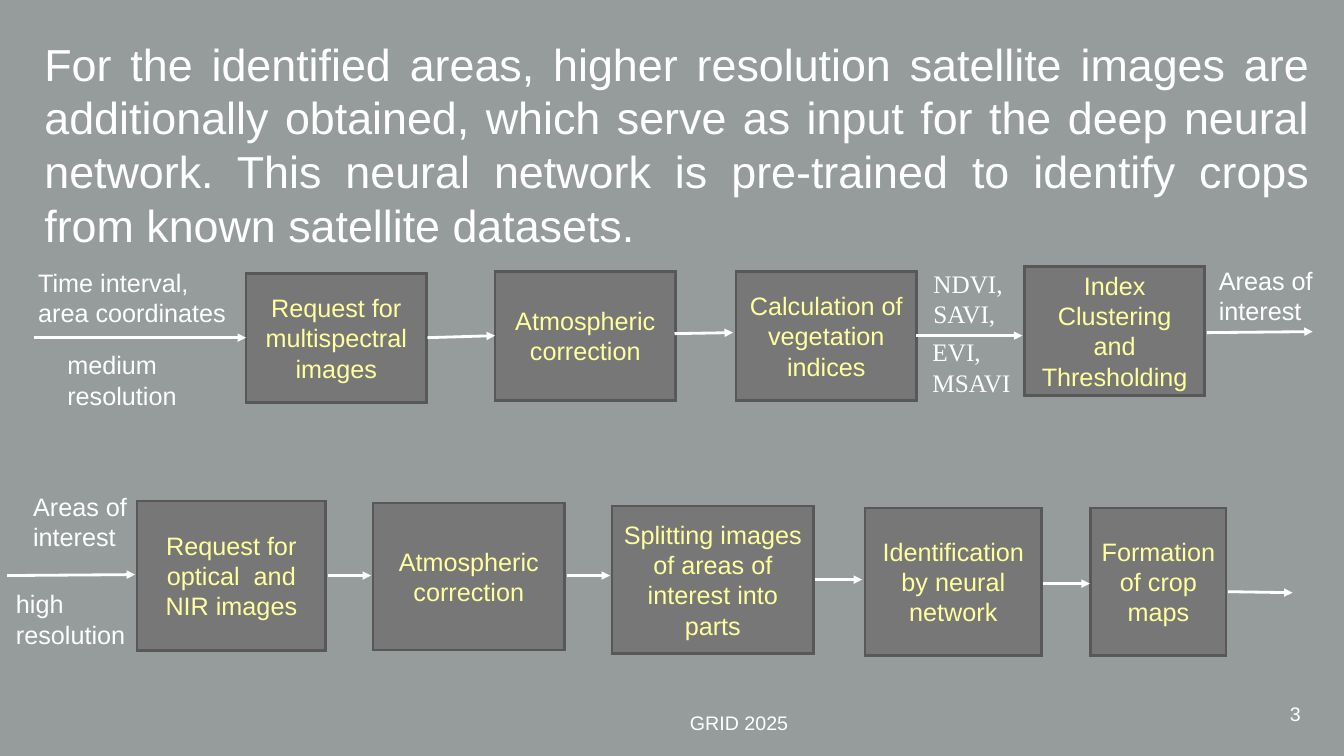
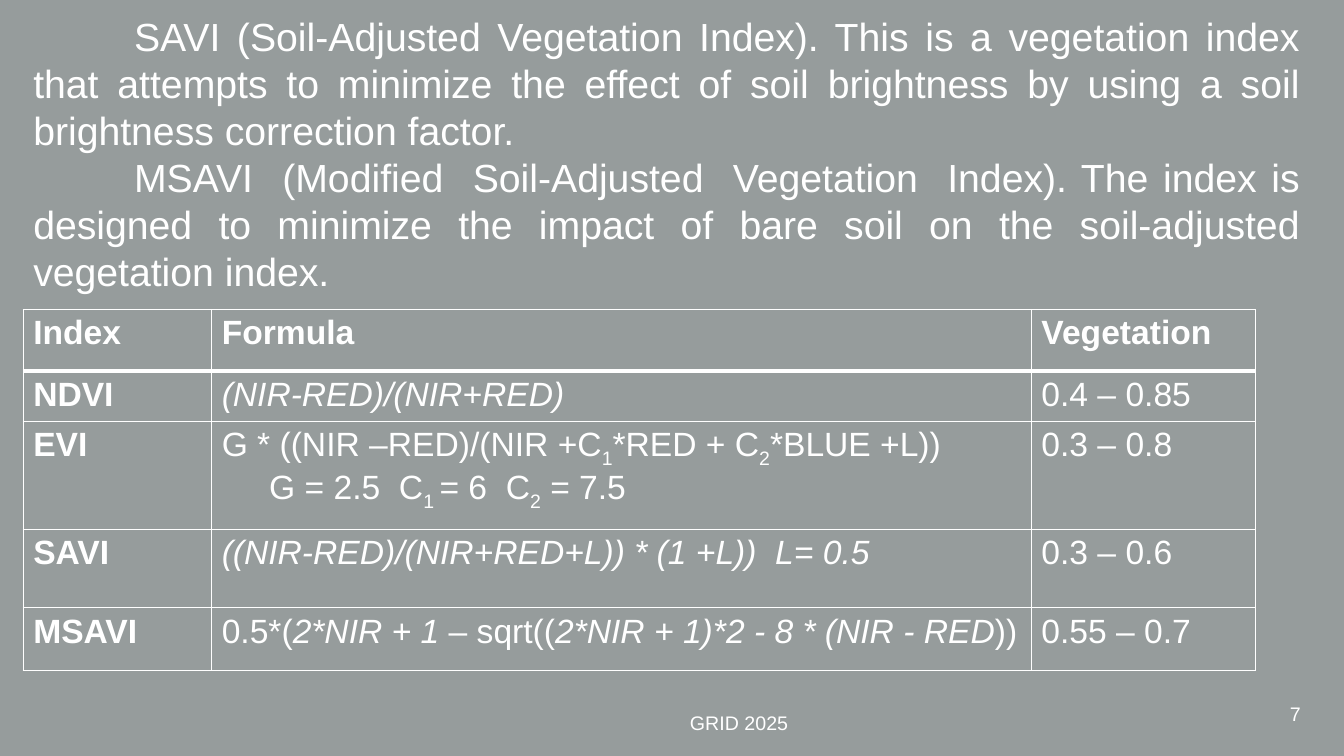
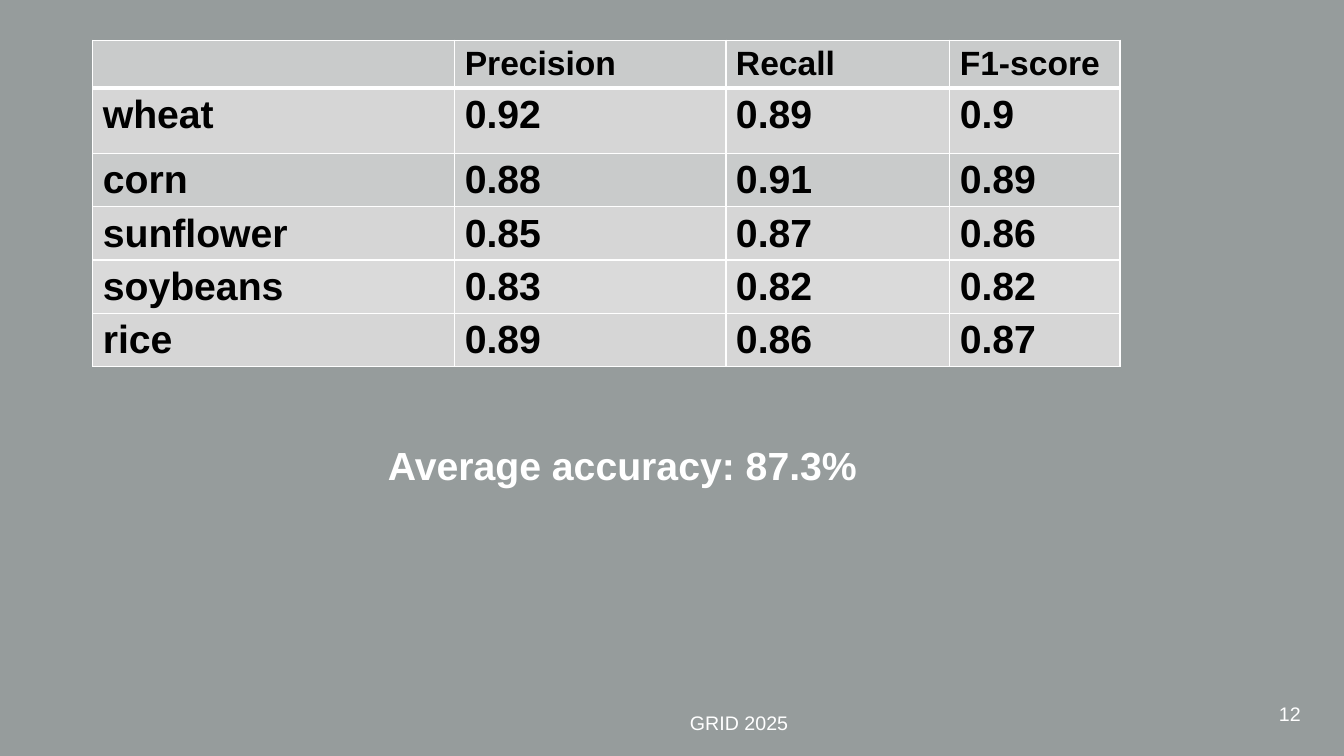
from dataclasses import dataclass
from itertools import product
from math import cos, pi, sin

from lxml.etree import SubElement
from pptx import Presentation
from pptx.dml.color import RGBColor
from pptx.enum.shapes import MSO_CONNECTOR, MSO_SHAPE
from pptx.enum.text import MSO_ANCHOR, MSO_AUTO_SIZE, PP_ALIGN
from pptx.oxml.ns import qn
from pptx.util import Inches, Pt

COLORS = {
    "background": "969C9C",
    "curve_end": "979E9F",
    "text": "FFFFFF",
    "box": "777777",
    "box_edge": "585858",
    "box_text": "FFFF9E",
    "score_text": "000000",
    "band_dark": "C9CBCB",
    "band_mid": "D6D6D6",
    "band_light": "DADADA",
}
FONT = "Arial"
SERIF = "Times New Roman"
FOOTER = "GRID 2025"


@dataclass
class Step:
    left: float
    top: float
    width: float
    height: float
    text: str


@dataclass
class Arrow:
    x1: float
    y1: float
    x2: float
    y2: float


@dataclass
class Label:
    left: float
    top: float
    width: float
    lines: tuple[str, ...]
    font: str = FONT


@dataclass
class Run:
    text: str
    italic: bool = False
    subscript: bool = False


@dataclass
class Grid:
    left: float
    top: float
    columns: tuple[float, ...]
    rows: tuple[float, ...]


# Processing chains
STEPS = (
    Step(2.44, 2.71, 1.79, 1.28, "Request for multispectral images"),
    Step(4.91, 2.69, 1.79, 1.28, "Atmospheric correction"),
    Step(7.3, 2.69, 1.79, 1.28, "Calculation of vegetation indices"),
    Step(10.16, 2.64, 1.79, 1.28, "Index Clustering and Thresholding"),
    Step(1.36, 4.97, 1.87, 1.48, "Request for optical  and NIR images"),
    Step(3.7, 4.99, 1.9, 1.46, "Atmospheric correction"),
    Step(6.07, 5.02, 2, 1.46, "Splitting images of areas of interest into parts"),
    Step(8.58, 5.04, 1.75, 1.46, "Identification by neural network"),
    Step(10.82, 5.04, 1.34, 1.46, "Formation of crop maps"),
)
ARROWS = (
    Arrow(0.34, 3.35, 2.44, 3.35),
    Arrow(4.24, 3.35, 4.91, 3.33),
    Arrow(6.69, 3.31, 7.27, 3.3),
    Arrow(9.09, 3.33, 10.14, 3.33),
    Arrow(11.97, 3.3, 13.02, 3.29),
    Arrow(0.07, 5.71, 1.34, 5.7),
    Arrow(3.25, 5.71, 3.68, 5.71),
    Arrow(5.62, 5.71, 6.05, 5.71),
    Arrow(8.08, 5.75, 8.55, 5.75),
    Arrow(10.34, 5.79, 10.81, 5.79),
    Arrow(12.18, 5.87, 12.82, 5.88),
)
LABELS = (
    Label(0.28, 2.6, 2.15, ("Time interval,", "area coordinates")),
    Label(0.57, 3.42, 1.36, ("medium", "resolution")),
    Label(9.16, 2.61, 0.9, ("NDVI,", "SAVI,"), SERIF),
    Label(9.15, 3.29, 0.98, ("EVI,", "MSAVI"), SERIF),
    Label(11.99, 2.58, 1.21, ("Areas of", "interest")),
    Label(0.23, 4.82, 1.21, ("Areas of", "interest")),
    Label(0.06, 5.79, 1.34, ("high", "resolution")),
)

# Vegetation indices: name, formula lines, range for vegetation
INDEX_GRID = Grid(0.23, 3.07, (1.87, 8.13, 2.22), (0.61, 0.49, 1.07, 0.78, 0.62))
INDEX_HEADER = ("Index", "Formula", "Vegetation")
INDICES = (
    ("NDVI", [[Run("(NIR-RED)/(NIR+RED)", italic=True)]], "0.4 – 0.85"),
    ("EVI", [
        [Run("G * ((NIR –RED)/(NIR +C"), Run("1", subscript=True), Run("*RED + C"),
         Run("2", subscript=True), Run("*BLUE +L))")],
        [Run("G = 2.5  C"), Run("1 ", subscript=True), Run("= 6  C"),
         Run("2", subscript=True), Run(" = 7.5")],
    ], "0.3 – 0.8"),
    ("SAVI", [[Run("((NIR-RED)/(NIR+RED+L)) * (1 +L))  L= 0.5", italic=True)]], "0.3 – 0.6"),
    ("MSAVI", [[Run("0.5*("), Run("2*NIR + 1 ", italic=True), Run("– sqrt(("),
                Run("2*NIR + 1)*2 - 8 * (NIR - RED", italic=True), Run("))")]], "0.55 – 0.7"),
)

# Crop recognition scores
SCORE_GRID = Grid(0.92, 0.4, (3.59, 2.69, 2.22, 1.69), (0.47, 0.65) + (0.53,) * 4)
SCORES = (
    ("", "Precision", "Recall", "F1-score"),
    ("wheat", "0.92", "0.89", "0.9"),
    ("corn", "0.88", "0.91", "0.89"),
    ("sunflower", "0.85", "0.87", "0.86"),
    ("soybeans", "0.83", "0.82", "0.82"),
    ("rice", "0.89", "0.86", "0.87"),
)
SCORE_BANDS = ("band_dark", "band_mid", "band_dark", "band_mid", "band_light", "band_mid")


def rgb(name: str) -> RGBColor:
    return RGBColor.from_string(COLORS[name])


def style(paragraph, size: float, color: str = "text", font: str = FONT,
          bold: bool = False, align=PP_ALIGN.LEFT) -> None:
    paragraph.alignment = align
    paragraph.font.size = Pt(size)
    paragraph.font.name = font
    paragraph.font.bold = bold
    paragraph.font.color.rgb = rgb(color)


def write_lines(frame, lines, size: float, **look) -> None:
    for number, line in enumerate(lines):
        paragraph = frame.add_paragraph() if number else frame.paragraphs[0]
        paragraph.text = line
        style(paragraph, size, **look)


def add_text(slide, left: float, top: float, width: float, height: float, lines,
             size: float, wrap: bool = True, anchor=MSO_ANCHOR.TOP, **look) -> None:
    box = slide.shapes.add_textbox(Inches(left), Inches(top), Inches(width), Inches(height))
    box.text_frame.word_wrap = wrap
    box.text_frame.vertical_anchor = anchor
    write_lines(box.text_frame, lines, size, **look)


def add_master_curve(deck, slide) -> None:
    """Quarter ellipse from the lower left corner, moved to the back of the master."""
    width, top, bottom, count = 4.22, 0.92, 7.5, 40
    angles = [pi / 2 * i / count for i in range(count + 1)]
    points = [(Inches(width * sin(a)), Inches(bottom - (bottom - top) * cos(a))) for a in angles]
    builder = slide.shapes.build_freeform(*points[0])
    builder.add_line_segments(points[1:] + [(0, Inches(bottom))], close=True)
    curve = builder.convert_to_shape()
    curve.shadow.inherit = False
    curve.line.fill.background()
    curve.fill.gradient()
    curve.fill.gradient_angle = 270
    for stop, color in zip(curve.fill.gradient_stops, ("background", "curve_end")):
        stop.color.rgb = rgb(color)
    deck.slide_master.shapes.element.insert(2, curve.element)


def new_slide(deck, layout: int, number: int):
    slide = deck.slides.add_slide(deck.slide_layouts[layout])
    add_text(slide, 10.22, 6.83, 2.78, 0.5, [str(number)], 14,
             anchor=MSO_ANCHOR.MIDDLE, align=PP_ALIGN.RIGHT)
    add_text(slide, 5.22, 7.01, 4.22, 0.32, [FOOTER], 14,
             anchor=MSO_ANCHOR.MIDDLE, align=PP_ALIGN.CENTER)
    return slide


def fill_body(slide, left: float, top: float, height: float, lines,
              size: float, indent: float = 0) -> None:
    title = slide.shapes.title
    title.element.getparent().remove(title.element)
    body = slide.placeholders[1]
    body.left, body.top = Inches(left), Inches(top)
    body.width, body.height = Inches(12.76), Inches(height)
    frame = body.text_frame
    frame.auto_size = MSO_AUTO_SIZE.NONE
    for number, line in enumerate(lines):
        paragraph = frame.add_paragraph() if number else frame.paragraphs[0]
        paragraph.text = line
        paragraph.space_before = Pt(0)
        properties = paragraph._p.get_or_add_pPr()
        properties.set("marL", "0")
        properties.set("indent", str(Inches(indent)))
        SubElement(properties, qn("a:buNone"))
        style(paragraph, size, align=PP_ALIGN.JUSTIFY)


def add_step(slide, step: Step) -> None:
    box = slide.shapes.add_shape(MSO_SHAPE.RECTANGLE, Inches(step.left), Inches(step.top),
                                 Inches(step.width), Inches(step.height))
    box.shadow.inherit = False
    box.fill.solid()
    box.fill.fore_color.rgb = rgb("box")
    box.line.color.rgb = rgb("box_edge")
    box.line.width = Pt(2)
    SubElement(box.line._get_or_add_ln(), qn("a:miter"), lim="800000")
    box.text_frame.word_wrap = True
    box.text_frame.vertical_anchor = MSO_ANCHOR.MIDDLE
    write_lines(box.text_frame, [step.text], 18, color="box_text", align=PP_ALIGN.CENTER)


def add_arrow(slide, arrow: Arrow) -> None:
    line = slide.shapes.add_connector(MSO_CONNECTOR.STRAIGHT, Inches(arrow.x1), Inches(arrow.y1),
                                      Inches(arrow.x2), Inches(arrow.y2))
    line.line.color.rgb = rgb("text")
    line.line.width = Pt(2)
    SubElement(line.line._get_or_add_ln(), qn("a:tailEnd"), type="triangle")
    SubElement(line._element.spPr, qn("a:effectLst"))


def set_borders(cell, widths: dict[str, float]) -> None:
    properties = cell._tc.get_or_add_tcPr()
    for position, (side, width) in enumerate(widths.items()):
        border = properties.makeelement(qn(f"a:ln{side}"), {"w": str(Pt(width))})
        fill = SubElement(border, qn("a:solidFill"))
        SubElement(fill, qn("a:srgbClr"), val=COLORS["text"])
        properties.insert(position, border)


def add_grid(slide, grid: Grid):
    """Table with thin white borders and a thick rule under its header."""
    table = slide.shapes.add_table(
        len(grid.rows), len(grid.columns), Inches(grid.left), Inches(grid.top),
        Inches(sum(grid.columns)), Inches(sum(grid.rows))).table
    table.first_row = table.horz_banding = False
    for column, width in zip(table.columns, grid.columns):
        column.width = Inches(width)
    for row, height in zip(table.rows, grid.rows):
        row.height = Inches(height)
    for r, c in product(range(len(grid.rows)), range(len(grid.columns))):
        cell = table.cell(r, c)
        cell.fill.background()
        set_borders(cell, {"L": 1, "R": 1, "T": 3 if r == 1 else 1, "B": 3 if r == 0 else 1})
    return table


def write_formula(frame, lines: list[list[Run]]) -> None:
    for number, runs in enumerate(lines):
        paragraph = frame.add_paragraph() if number else frame.paragraphs[0]
        if number:
            paragraph._p.get_or_add_pPr().set("marL", str(Inches(0.47)))
        style(paragraph, 24)
        for part in runs:
            run = paragraph.add_run()
            run.text = part.text
            if part.italic:
                run.font.italic = True
            if part.subscript:
                run._r.get_or_add_rPr().set("baseline", "-25000")


def build_pipeline(deck) -> None:
    slide = new_slide(deck, 1, 3)
    add_master_curve(deck, slide)
    fill_body(slide, 0.34, 0.31, 2.25, [
        "For the identified areas, higher resolution satellite images are additionally obtained, "
        "which serve as input for the deep neural network. This neural network is pre-trained "
        "to identify crops from known satellite datasets."], 32)
    for step in STEPS:
        add_step(slide, step)
    for arrow in ARROWS:
        add_arrow(slide, arrow)
    for label in LABELS:
        add_text(slide, label.left, label.top, label.width, 0.71, label.lines, 18,
                 wrap=False, font=label.font)


def build_indices(deck) -> None:
    slide = new_slide(deck, 1, 7)
    fill_body(slide, 0.23, 0.07, 2.95, [
        "SAVI (Soil-Adjusted Vegetation Index). This is a vegetation index that attempts to "
        "minimize the effect of soil brightness by using a soil brightness correction factor.",
        "MSAVI  (Modified  Soil-Adjusted  Vegetation  Index). The index is designed to minimize "
        "the impact of bare soil on the soil-adjusted vegetation index."], 28, indent=1)
    table = add_grid(slide, INDEX_GRID)
    for c, heading in enumerate(INDEX_HEADER):
        write_lines(table.cell(0, c).text_frame, [heading], 24, bold=True)
    for r, (name, formula, vegetation) in enumerate(INDICES, start=1):
        write_lines(table.cell(r, 0).text_frame, [name], 24, bold=True)
        write_formula(table.cell(r, 1).text_frame, formula)
        write_lines(table.cell(r, 2).text_frame, [vegetation], 24)


def build_scores(deck) -> None:
    slide = new_slide(deck, 6, 12)
    table = add_grid(slide, SCORE_GRID)
    for r, (row, band) in enumerate(zip(SCORES, SCORE_BANDS)):
        for c, value in enumerate(row):
            cell = table.cell(r, c)
            cell.margin_bottom = Inches(0.01)
            cell.fill.solid()
            cell.fill.fore_color.rgb = rgb(band)
            if value:
                write_lines(cell.text_frame, [value], 28 if r else 24,
                            color="score_text", bold=True)
    add_text(slide, 3.75, 4.33, 5.83, 0.57, ["Average accuracy: 87.3%"], 28, bold=True)


def main() -> None:
    deck = Presentation()
    deck.slide_width, deck.slide_height = Inches(13.33), Inches(7.5)
    background = deck.slide_master.background.fill
    background.solid()
    background.fore_color.rgb = rgb("background")
    build_pipeline(deck)
    build_indices(deck)
    build_scores(deck)
    deck.save("out.pptx")


if __name__ == "__main__":
    main()
